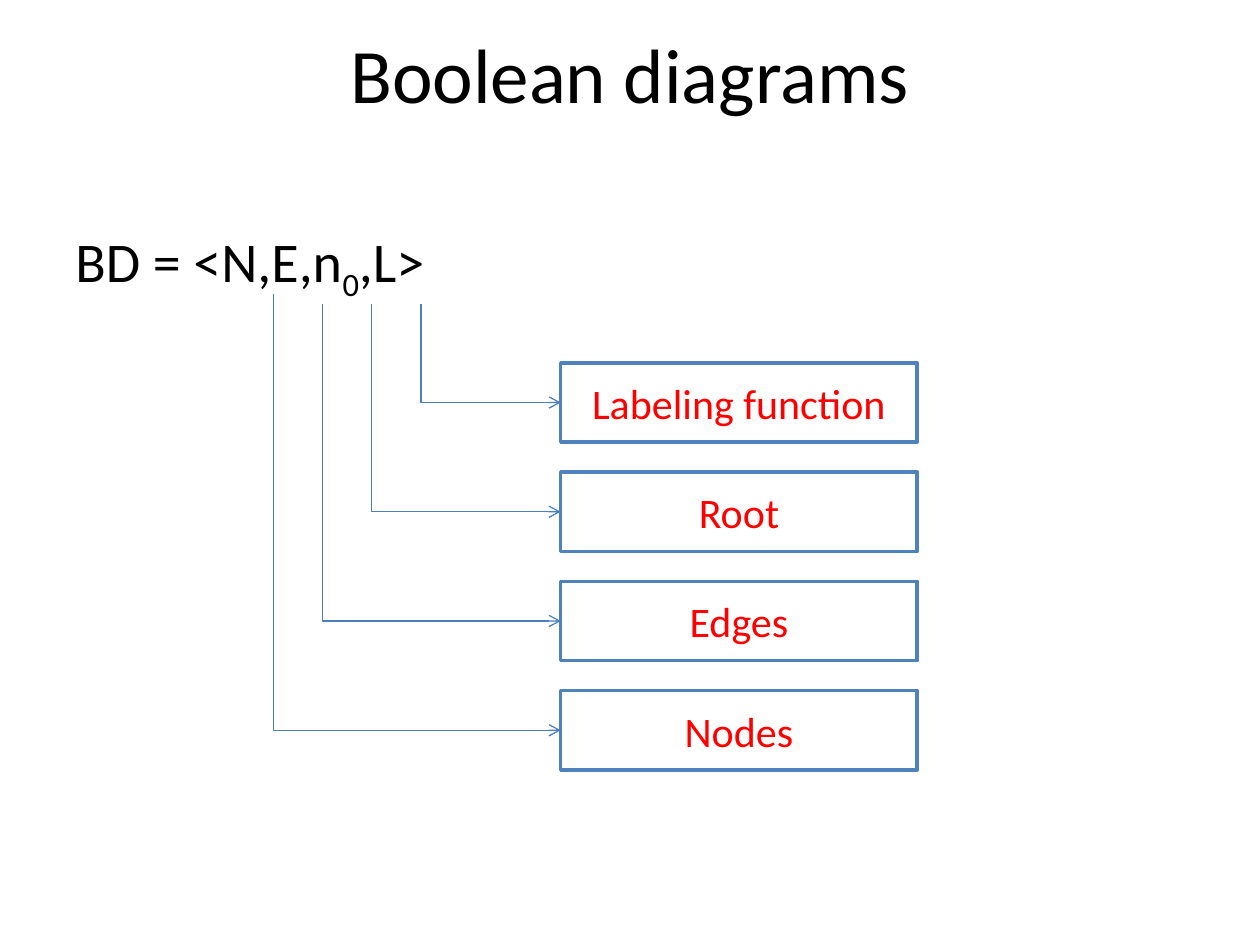
import pptx
import pptx.dml.color
import pptx.enum.shapes
import pptx.enum.text
import pptx.oxml
import pptx.oxml.ns
import pptx.util
from pptx.util import Inches


def color(value):
    return pptx.dml.color.RGBColor.from_string(value)


def write_text(shape, pieces, size, text_color, alignment, anchor):
    """Fill one paragraph with runs; pieces are (text, baseline) pairs."""
    frame = shape.text_frame
    frame.word_wrap = True
    frame.vertical_anchor = anchor
    paragraph = frame.paragraphs[0]
    paragraph.alignment = alignment
    paragraph.font.name = "Calibri"
    paragraph.font.size = pptx.util.Pt(size)
    paragraph.font.color.rgb = color(text_color)
    for text, baseline in pieces:
        run = paragraph.add_run()
        run.text = text
        if baseline:
            run.font._element.set("baseline", str(baseline))


presentation = pptx.Presentation()
presentation.slide_width = Inches(10)
presentation.slide_height = Inches(7.5)
slide = presentation.slides.add_slide(presentation.slide_layouts[6])

align = pptx.enum.text.PP_ALIGN
anchors = pptx.enum.text.MSO_ANCHOR

# Title
title = slide.shapes.add_textbox(Inches(0.5), Inches(0), Inches(9), Inches(1.15))
write_text(title, [("Boolean diagrams", 0)], 44, "000000", align.CENTER, anchors.MIDDLE)

# Formula with a subscript
formula = slide.shapes.add_textbox(Inches(0.5), Inches(1.75), Inches(9), Inches(4.6))
write_text(formula, [("BD = <N,E,n", 0), ("0", -25000), (",L>", 0)],
           32, "000000", align.LEFT, anchors.TOP)

# Component boxes, each with an elbow arrow from its symbol in the formula
box_left, box_top, box_width, box_height = 4.45, 2.88, 2.83, 0.63
box_step = 0.867
components = [  # label, arrow start x, arrow start y
    ("Labeling function", 3.34, 2.41),
    ("Root", 2.95, 2.41),
    ("Edges", 2.56, 2.41),
    ("Nodes", 2.17, 2.33),
]
for index, (label, start_x, start_y) in enumerate(components):
    top = box_top + index * box_step
    box = slide.shapes.add_shape(
        pptx.enum.shapes.MSO_SHAPE.RECTANGLE,
        Inches(box_left), Inches(top), Inches(box_width), Inches(box_height))
    box.shadow.inherit = False
    box.fill.solid()
    box.fill.fore_color.rgb = color("FFFFFF")
    box.line.color.rgb = color("4F81BD")
    box.line.width = pptx.util.Pt(2)
    write_text(box, [(label, 0)], 24, "FF0000", align.CENTER, anchors.MIDDLE)

    arrow = slide.shapes.add_connector(
        pptx.enum.shapes.MSO_CONNECTOR.ELBOW,
        Inches(start_x), Inches(start_y),
        Inches(box_left), Inches(top + box_height / 2))
    arrow.line.color.rgb = color("4B7EBC")
    arrow.line.width = pptx.util.Pt(0.75)
    # Bend at the start, so the arrow runs straight down and then right
    properties = arrow._element.spPr
    guides = properties.prstGeom.get_or_add_avLst()
    guide = pptx.oxml.ns.qn("a:gd")
    guides.append(guides.makeelement(guide, {"name": "adj1", "fmla": "val 0"}))
    line = arrow.line._get_or_add_ln()
    line.append(line.makeelement(pptx.oxml.ns.qn("a:tailEnd"), {"type": "arrow"}))
    properties.append(properties.makeelement(pptx.oxml.ns.qn("a:effectLst"), {}))

presentation.save("out.pptx")
